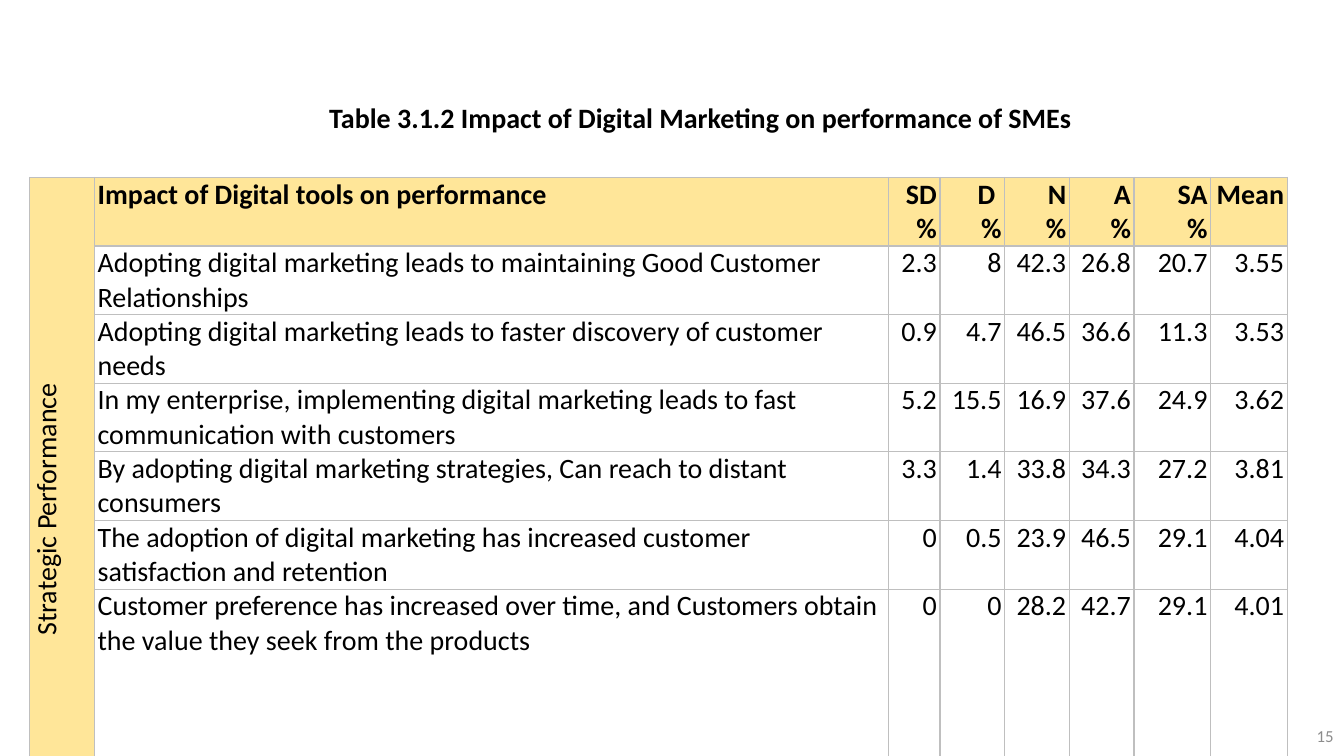
from lxml.etree import SubElement
from pptx import Presentation
from pptx.dml.color import RGBColor
from pptx.enum.text import MSO_ANCHOR as Anchor, PP_ALIGN as Align
from pptx.oxml.ns import qn
from pptx.util import Cm, Pt

CAPTION = "Table 3.1.2 Impact of Digital Marketing on performance of SMEs"
PAGE_NUMBER = "15"
GROUP = "Strategic Performance"
HEADER = ("Impact of Digital tools on performance",
          "SD %", "D \n%", "N\n%", "A\n%", "SA\n%", "Mean")
RESPONSES = [
    ("Adopting digital marketing leads to maintaining Good Customer Relationships",
     "2.3", "8", "42.3", "26.8", "20.7", "3.55"),
    ("Adopting digital marketing leads to faster discovery of customer needs",
     "0.9", "4.7", "46.5", "36.6", "11.3", "3.53"),
    ("In my enterprise, implementing digital marketing leads to fast communication with customers",
     "5.2", "15.5", "16.9", "37.6", "24.9", "3.62"),
    ("By adopting digital marketing strategies, Can reach to distant consumers",
     "3.3", "1.4", "33.8", "34.3", "27.2", "3.81"),
    ("The adoption of digital marketing has increased customer satisfaction and retention",
     "0", "0.5", "23.9", "46.5", "29.1", "4.04"),
    ("Customer preference has increased over time, and Customers obtain "
     "the value they seek from the products",
     "0", "0", "28.2", "42.7", "29.1", "4.01"),
]
COLUMN_WIDTHS = (1.63, 20.01, 1.3, 1.63, 1.63, 1.63, 1.93, 1.93)
ROW_HEIGHTS = (0.86, 0.86, 1.73, 1.45, 0.86, 1.14, 1.14)

BLACK = RGBColor(0x00, 0x00, 0x00)
GREY = RGBColor(0x8C, 0x8C, 0x8C)
BORDER = RGBColor(0xBF, 0xBF, 0xBF)
YELLOW = RGBColor(0xFF, 0xE6, 0x99)
CELL_FORMAT = {"margin_left": Cm(0.08), "margin_right": Cm(0.08),
               "margin_top": 0, "margin_bottom": 0, "vertical_anchor": Anchor.TOP}


def set_values(target, values):
    """Set each attribute of the target from a dict."""
    for name, value in values.items():
        setattr(target, name, value)


def format_text(frame, align, size=20, bold=False, color=BLACK):
    """Align and style every paragraph of a text frame."""
    for paragraph in frame.paragraphs:
        paragraph.alignment = align
        set_values(paragraph.font, {"name": "Calibri", "size": Pt(size), "bold": bold})
        paragraph.font.color.rgb = color


def add_borders(cell):
    """Draw a thin line on all four sides of a cell."""
    properties = cell._tc.get_or_add_tcPr()
    for side in ("lnL", "lnR", "lnT", "lnB"):
        line = SubElement(properties, qn(f"a:{side}"), w=str(Pt(1)))
        fill = SubElement(line, qn("a:solidFill"))
        SubElement(fill, qn("a:srgbClr"), val=str(BORDER))


def fill_cell(cell, row, column, text):
    """Write and format one cell of the table."""
    add_borders(cell)
    set_values(cell, CELL_FORMAT)
    if row == 0 or column == 0:
        cell.fill.solid()
        cell.fill.fore_color.rgb = YELLOW
    else:
        cell.fill.background()
    cell.text = text
    align = {0: Align.CENTER, 1: Align.LEFT}.get(column, Align.RIGHT)
    format_text(cell.text_frame, align, bold=row == 0 and column > 0)


def add_response_table(slide):
    """Add the table of survey responses."""
    rows = [HEADER, *RESPONSES]
    shape = slide.shapes.add_table(
        len(rows), len(COLUMN_WIDTHS), Cm(0.75), Cm(4.47),
        Cm(sum(COLUMN_WIDTHS)), Cm(sum(ROW_HEIGHTS)))
    table = shape.table
    set_values(table, {"first_row": False, "horz_banding": False})
    for column, width in zip(table.columns, COLUMN_WIDTHS):
        column.width = Cm(width)
    for row, height in zip(table.rows, ROW_HEIGHTS):
        row.height = Cm(height)
    for r, values in enumerate(rows):
        group = GROUP if r == 0 else ""
        for c, text in enumerate((group, *values)):
            fill_cell(table.cell(r, c), r, c, text)
    group_cell = table.cell(0, 0)
    group_cell.merge(table.cell(len(rows) - 1, 0))
    group_cell._tc.get_or_add_tcPr().set("vert", "vert270")


def main():
    """Build the slide and save it."""
    presentation = Presentation()
    set_values(presentation, {"slide_width": Cm(33.87), "slide_height": Cm(19.05)})
    slide = presentation.slides.add_slide(presentation.slide_layouts[5])

    title = slide.shapes.title
    set_values(title, {"left": Cm(1.45), "top": Cm(2.41),
                       "width": Cm(32.41), "height": Cm(1.11)})
    title.text_frame.text = CAPTION
    set_values(title.text_frame, {"word_wrap": True, "vertical_anchor": Anchor.TOP})
    format_text(title.text_frame, Align.CENTER, bold=True)

    add_response_table(slide)

    number = slide.shapes.add_textbox(Cm(26.24), Cm(18.03), Cm(7.62), Cm(1.02))
    number.text_frame.text = PAGE_NUMBER
    set_values(number.text_frame, {"word_wrap": True, "vertical_anchor": Anchor.MIDDLE})
    format_text(number.text_frame, Align.RIGHT, size=12, color=GREY)

    presentation.save("out.pptx")


if __name__ == "__main__":
    main()
